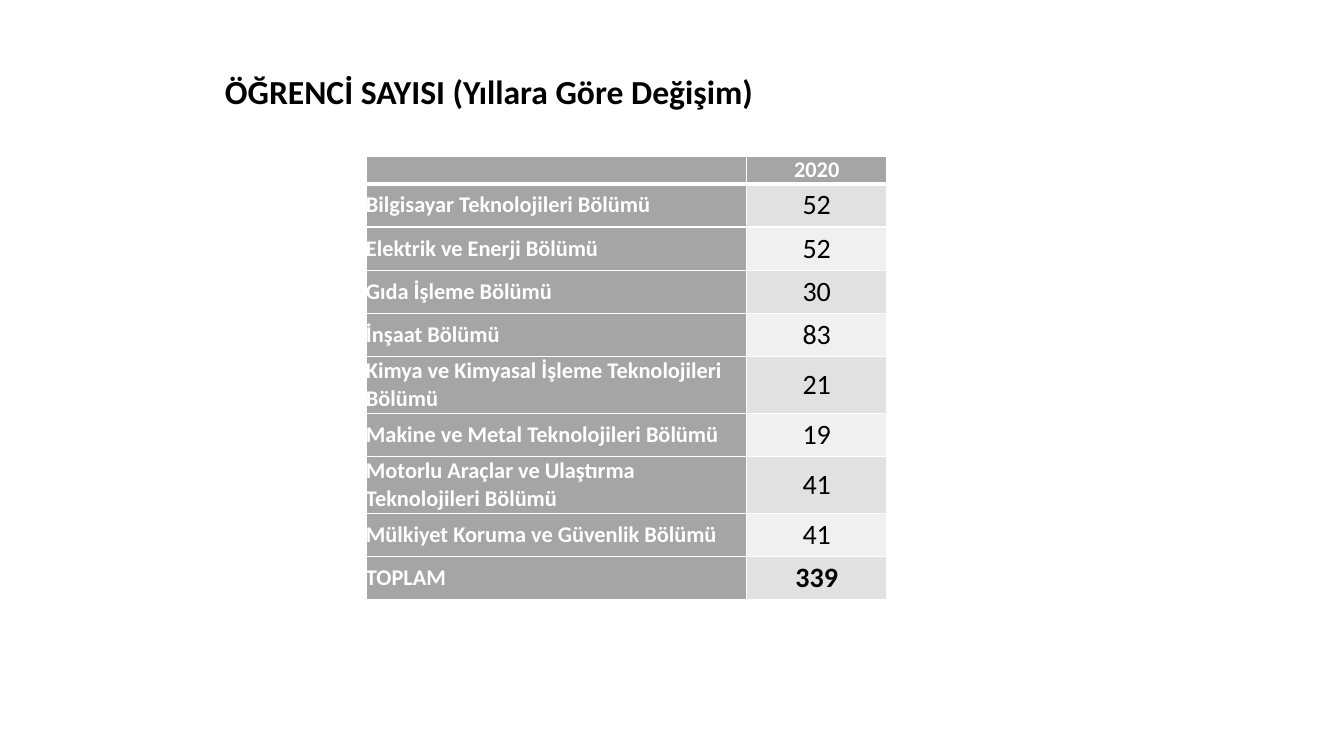
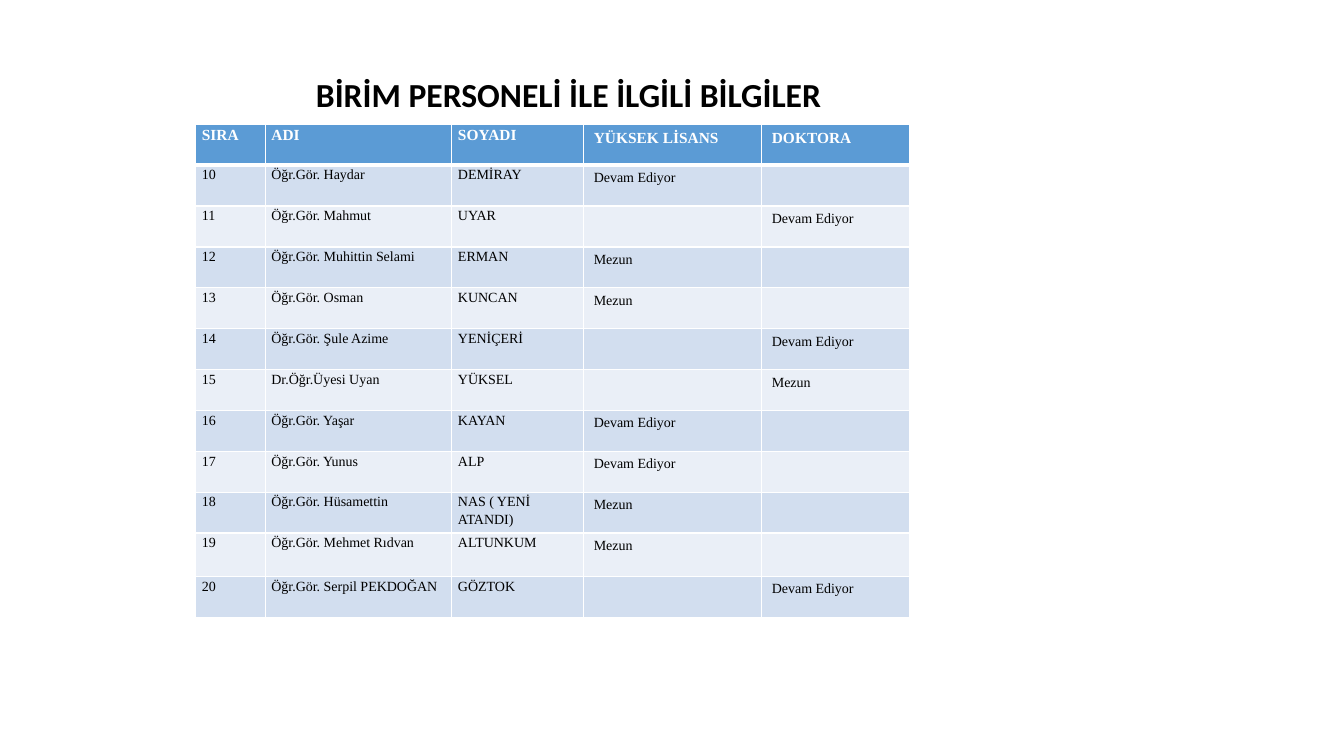
from lxml.etree import SubElement
from pptx import Presentation
from pptx.dml.color import RGBColor
from pptx.enum.text import MSO_ANCHOR, MSO_AUTO_SIZE, PP_ALIGN
from pptx.oxml.ns import qn
from pptx.util import Pt

WHITE, BLACK = "FFFFFF", "000000"
GREY, GREY_BANDS = "A5A5A5", ("E1E1E1", "F0F0F0")
BLUE, BLUE_BANDS = "5B9BD5", ("D2DEEF", "EAEFF7")
SANS, SERIF = "Calibri", "Times New Roman"
THIN, THICK = 1, 3

STUDENTS = [
    ("", "2020"),
    ("Bilgisayar Teknolojileri Bölümü", "52"),
    ("Elektrik ve Enerji Bölümü", "52"),
    ("Gıda İşleme Bölümü", "30"),
    ("İnşaat Bölümü", "83"),
    ("Kimya ve Kimyasal İşleme Teknolojileri Bölümü", "21"),
    ("Makine ve Metal Teknolojileri Bölümü", "19"),
    ("Motorlu Araçlar ve Ulaştırma Teknolojileri Bölümü", "41"),
    ("Mülkiyet Koruma ve Güvenlik Bölümü", "41"),
    ("TOPLAM", "339"),
]
STAFF = [
    ("SIRA", "ADI", "SOYADI", "YÜKSEK LİSANS", "DOKTORA"),
    ("10", "Öğr.Gör. Haydar", "DEMİRAY", "Devam Ediyor", ""),
    ("11", "Öğr.Gör. Mahmut", "UYAR", "", "Devam Ediyor"),
    ("12", "Öğr.Gör. Muhittin Selami", "ERMAN", "Mezun", ""),
    ("13", "Öğr.Gör. Osman", "KUNCAN", "Mezun", ""),
    ("14", "Öğr.Gör. Şule Azime", "YENİÇERİ", "", "Devam Ediyor"),
    ("15", "Dr.Öğr.Üyesi Uyan", "YÜKSEL", "", "Mezun"),
    ("16", "Öğr.Gör. Yaşar", "KAYAN", "Devam Ediyor", ""),
    ("17", "Öğr.Gör. Yunus", "ALP", "Devam Ediyor", ""),
    ("18", "Öğr.Gör. Hüsamettin", "NAS ( YENİ ATANDI)", "Mezun", ""),
    ("19", "Öğr.Gör. Mehmet Rıdvan", "ALTUNKUM", "Mezun", ""),
    ("20", "Öğr.Gör. Serpil PEKDOĞAN", "GÖZTOK", "", "Devam Ediyor"),
]


def color(value):
    return RGBColor.from_string(value)


def add_run(para, text, font, size, ink, bold):
    span = para.add_run()
    span.text = text
    span.font.name = font
    span.font.size = Pt(size)
    span.font.bold = bold
    span.font.color.rgb = color(ink)


def add_page(deck, title, left, top, width, height, align, wrap):
    page = deck.slides.add_slide(deck.slide_layouts[5])
    box = page.shapes.title
    box.left, box.top, box.width, box.height = Pt(left), Pt(top), Pt(width), Pt(height)
    frame = box.text_frame
    frame.word_wrap = wrap
    frame.auto_size = MSO_AUTO_SIZE.NONE
    frame.vertical_anchor = MSO_ANCHOR.TOP
    para = frame.paragraphs[0]
    para.alignment = align
    add_run(para, title, SANS, 24, BLACK, True)
    return page


def set_borders(cell, top, bottom):
    properties = cell._tc.get_or_add_tcPr()
    edges = (("lnL", THIN), ("lnR", THIN), ("lnT", top), ("lnB", bottom))
    for position, (edge, weight) in enumerate(edges):
        line = SubElement(properties, qn(f"a:{edge}"), w=str(Pt(weight)))
        fill = SubElement(line, qn("a:solidFill"))
        SubElement(fill, qn("a:srgbClr"), val=WHITE)
        properties.insert(position, line)


def fill_cell(cell, text, fill, font, size, ink, bold, margins,
              align=PP_ALIGN.LEFT, anchor=MSO_ANCHOR.TOP, spacing=1.0):
    cell.fill.solid()
    cell.fill.fore_color.rgb = color(fill)
    side, edge = margins
    cell.margin_left = cell.margin_right = Pt(side)
    cell.margin_top = cell.margin_bottom = Pt(edge)
    cell.vertical_anchor = anchor
    para = cell.text_frame.paragraphs[0]
    para.alignment = align
    para.line_spacing = spacing
    if text:
        add_run(para, text, font, size, ink, bold)
    else:
        SubElement(para._p, qn("a:endParaRPr"), sz=str(size * 100))


def add_grid(page, left, top, widths, heights, records, style_cell):
    table = page.shapes.add_table(
        len(heights), len(widths), Pt(left), Pt(top), Pt(sum(widths)), Pt(sum(heights))
    ).table
    for column, width in zip(table.columns, widths):
        column.width = Pt(width)
    for row, height in zip(table.rows, heights):
        row.height = Pt(height)
    for row, record in enumerate(records):
        for column, text in enumerate(record):
            cell = table.cell(row, column)
            style_cell(cell, text, row, column)
            set_borders(cell, THICK if row == 1 else THIN, THICK if row == 0 else THIN)


def style_student_cell(cell, text, row, column):
    heading = row == 0 or column == 0
    fill_cell(
        cell, text, GREY if heading else GREY_BANDS[(row - 1) % 2], SANS,
        16 if heading else 20, WHITE if heading else BLACK,
        heading or row == len(STUDENTS) - 1, (0, 0),
        align=PP_ALIGN.CENTER if column else PP_ALIGN.LEFT, anchor=MSO_ANCHOR.MIDDLE,
    )


def style_staff_cell(cell, text, row, column):
    heading = row == 0
    personal = column < 3
    fill_cell(
        cell, text, BLUE if heading else BLUE_BANDS[(row - 1) % 2], SERIF,
        11 if heading else 10, WHITE if heading else BLACK, heading,
        (4.5, 0) if personal else (7.2, 3.6), spacing=1.15 if personal else 1.0,
    )


def build_students(deck):
    page = add_page(deck, "ÖĞRENCİ SAYISI (Yıllara Göre Değişim)",
                    153.5, 47, 395, 36, PP_ALIGN.LEFT, False)
    heights = [19.5] + [40.5 if len(name) > 40 else 30.9 for name, _ in STUDENTS[1:]]
    add_grid(page, 261.4, 111.6, (272, 100), heights, STUDENTS, style_student_cell)


def build_staff(deck):
    page = add_page(deck, "BİRİM PERSONELİ İLE İLGİLİ BİLGİLER",
                    139.7, 49, 533, 65.5, PP_ALIGN.CENTER, True)
    heights = [31 if record[0] == "19" else 29.2 for record in STAFF]
    add_grid(page, 139.7, 88.8, (49.7, 133.3, 94.3, 127.2, 105.8), heights,
             STAFF, style_staff_cell)


def main():
    deck = Presentation()
    deck.slide_width, deck.slide_height = Pt(960), Pt(540)
    build_students(deck)
    build_staff(deck)
    deck.save("out.pptx")


if __name__ == "__main__":
    main()
